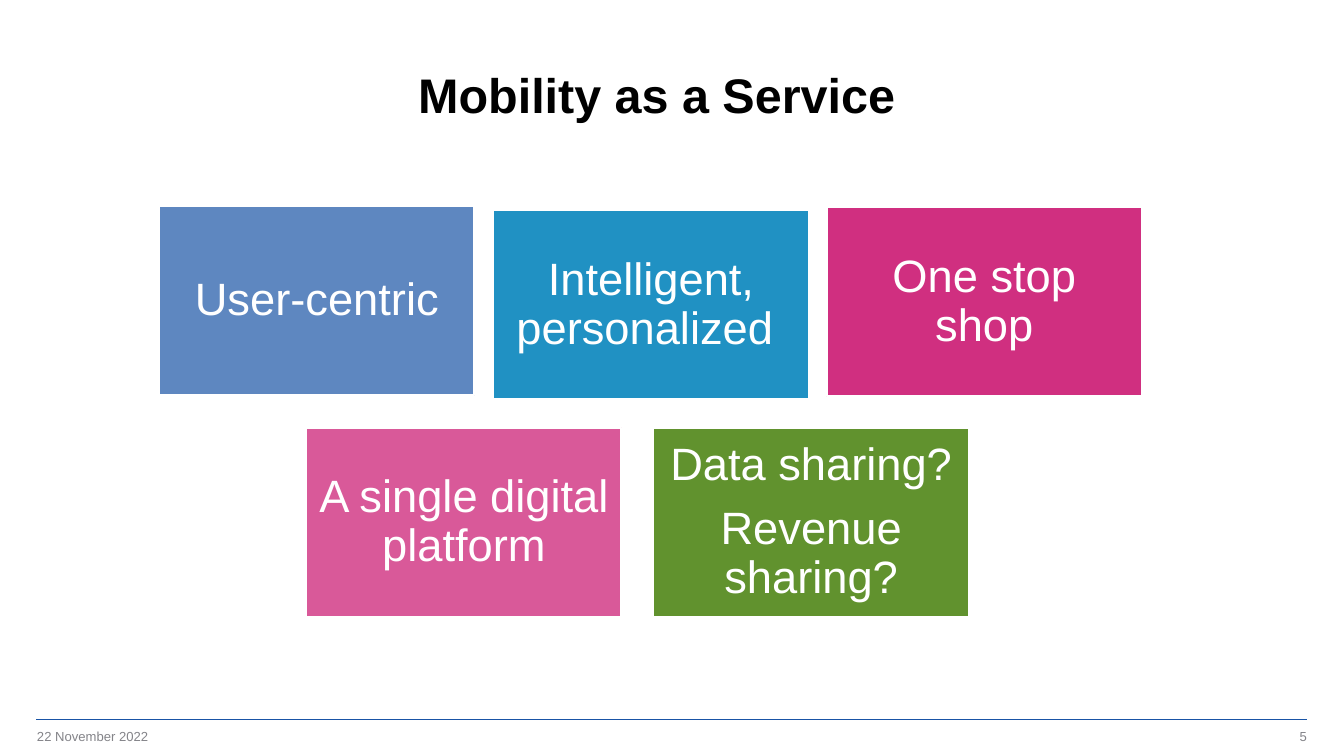
from lxml import etree
from pptx import Presentation
from pptx.dml.color import RGBColor
from pptx.enum.shapes import MSO_CONNECTOR, MSO_SHAPE
from pptx.enum.text import MSO_ANCHOR, PP_ALIGN
from pptx.oxml.ns import qn
from pptx.util import Pt

LEFT, CENTER, RIGHT = PP_ALIGN.LEFT, PP_ALIGN.CENTER, PP_ALIGN.RIGHT
MIDDLE = MSO_ANCHOR.MIDDLE
RECTANGLE = MSO_SHAPE.RECTANGLE
STRAIGHT = MSO_CONNECTOR.STRAIGHT

BLACK = RGBColor(0x00, 0x00, 0x00)
WHITE = RGBColor(0xFF, 0xFF, 0xFF)
GREY = RGBColor(0x84, 0x84, 0x89)
RULE_BLUE = RGBColor(0x19, 0x54, 0xA6)
BLUE = RGBColor(0x5E, 0x87, 0xC0)
CYAN = RGBColor(0x20, 0x91, 0xC3)
MAGENTA = RGBColor(0xD0, 0x2F, 0x80)
PINK = RGBColor(0xD9, 0x59, 0x99)
GREEN = RGBColor(0x61, 0x92, 0x2E)

EMU_PER_PX = 12915
SLIDE_SIZE = (1343, 755)
CARD_SIZE = (315, 189)
CARD_INSET = 13
MARGIN_LEFT, MARGIN_RIGHT = 36, 1306
RULE_Y = 719
FOOTER_TOP, FOOTER_WIDTH, FOOTER_HEIGHT = 727, 302, 17

TITLE = "Mobility as a Service"
TITLE_BOX = (102, 46, 1109, 99)
CARDS = [  # left, top, fill, paragraphs
    (159, 206, BLUE, ["User-centric"]),
    (493, 210, CYAN, ["Intelligent, personalized "]),
    (826, 207, MAGENTA, ["One stop shop"]),
    (306, 427, PINK, ["A single digital platform"]),
    (653, 427, GREEN, ["Data sharing?", "Revenue sharing?"]),
]
FOOTERS = [  # left, alignment, text
    (MARGIN_LEFT + 1, LEFT, "22 November 2022"),
    (MARGIN_RIGHT - FOOTER_WIDTH, RIGHT, "5"),
]


def px(*lengths):
    return [length * EMU_PER_PX for length in lengths]


def write(shape, lines, size, color, align=CENTER, bold=False, inset=None,
          wrap=True, line_spacing=None, space_after=None):
    frame = shape.text_frame
    frame.word_wrap = wrap
    frame.vertical_anchor = MIDDLE
    if inset is not None:
        frame.margin_left, frame.margin_top, frame.margin_right, frame.margin_bottom = px(*[inset] * 4)
    frame.text = "\n".join(lines)
    for paragraph in frame.paragraphs:
        paragraph.alignment = align
        paragraph.line_spacing = line_spacing
        paragraph.space_before = Pt(0)
        paragraph.space_after = space_after
        for run in paragraph.runs:
            font = run.font
            font.name, font.size, font.bold = "Arial", Pt(size), bold
            font.color.rgb = color


def add_rule(slide):
    rule = slide.shapes.add_connector(STRAIGHT, *px(MARGIN_LEFT, RULE_Y, MARGIN_RIGHT, RULE_Y))
    rule.line.color.rgb = RULE_BLUE
    rule.line.width = Pt(1)
    etree.SubElement(rule._element.spPr, qn("a:effectLst"))


def add_card(slide, left, top, fill, lines):
    card = slide.shapes.add_shape(RECTANGLE, *px(left, top, *CARD_SIZE))
    card.shadow.inherit = False
    card.fill.solid()
    card.fill.fore_color.rgb = fill
    card.line.color.rgb = WHITE
    card.line.width = Pt(2)
    write(card, lines, 46, WHITE, inset=CARD_INSET, line_spacing=0.9, space_after=Pt(16))


def main():
    presentation = Presentation()
    presentation.slide_width, presentation.slide_height = px(*SLIDE_SIZE)
    slide = presentation.slides.add_slide(presentation.slide_layouts[5])

    title = slide.shapes.title
    title.left, title.top, title.width, title.height = px(*TITLE_BOX)
    write(title, [TITLE], 49.3, BLACK, bold=True, line_spacing=Pt(56.9))

    add_rule(slide)
    for left, align, text in FOOTERS:
        footer = slide.shapes.add_textbox(*px(left, FOOTER_TOP, FOOTER_WIDTH, FOOTER_HEIGHT))
        write(footer, [text], 13.3, GREY, align=align, inset=0, wrap=True)
    for card in CARDS:
        add_card(slide, *card)

    presentation.save("out.pptx")


if __name__ == "__main__":
    main()
